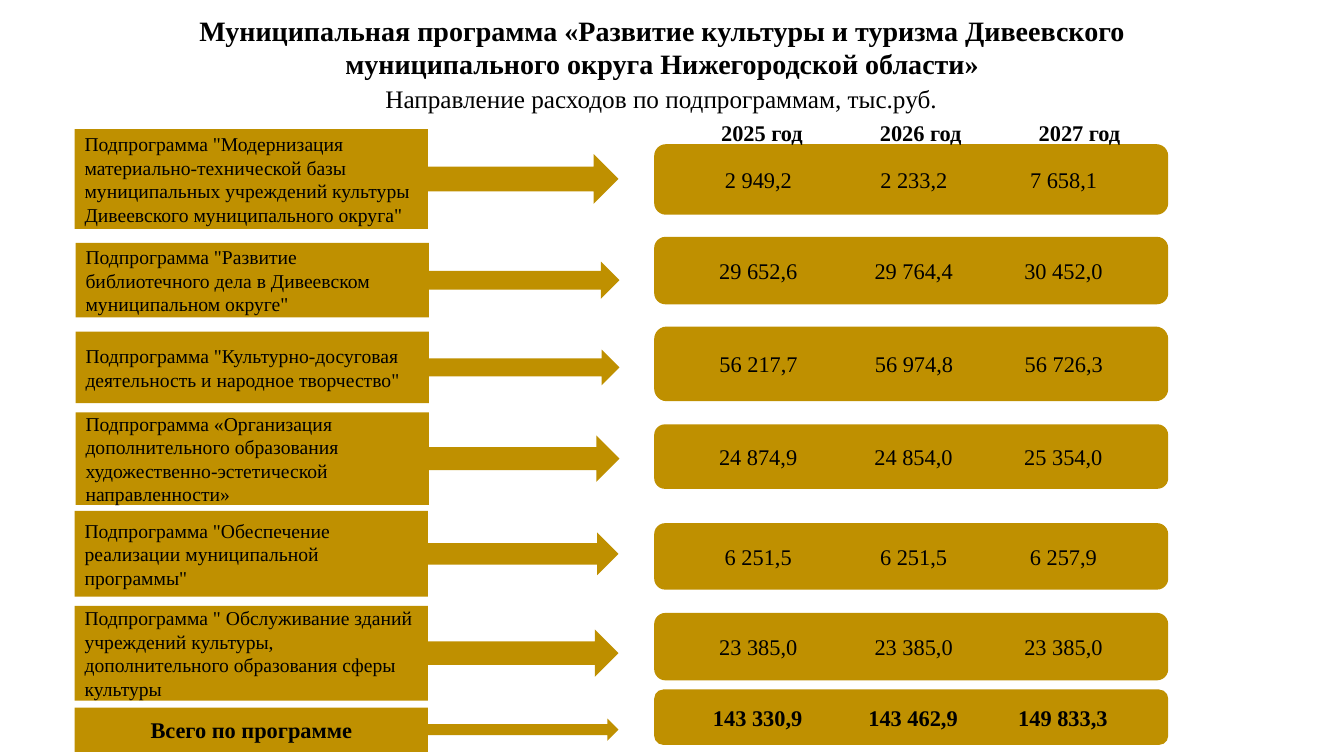
from lxml import etree
from pptx import Presentation
from pptx.dml.color import RGBColor
from pptx.enum.shapes import MSO_SHAPE
from pptx.enum.text import MSO_ANCHOR, MSO_AUTO_SIZE, PP_ALIGN
from pptx.oxml.ns import qn
from pptx.util import Pt

LEFT, CENTER = PP_ALIGN.LEFT, PP_ALIGN.CENTER
MIDDLE = MSO_ANCHOR.MIDDLE
NO_AUTOFIT = MSO_AUTO_SIZE.NONE
CALLOUT, ROUNDED = MSO_SHAPE.RIGHT_ARROW_CALLOUT, MSO_SHAPE.ROUNDED_RECTANGLE
COLORS = {"gold": "BF9000", "text": "000000"}
FONT = "Times New Roman"
VALUE_TABS = (72, 183, 290)

TITLE = ("Муниципальная программа «Развитие культуры и туризма Дивеевского "
         "муниципального округа Нижегородской области»")
SUBTITLE = "Направление расходов по подпрограммам, тыс.руб."
YEARS = ("2025 год", "2026 год", "2027 год")
PROGRAMS = [
    ('Подпрограмма "Модернизация материально-технической базы муниципальных '
     'учреждений культуры Дивеевского муниципального округа"',
     53.3, 92.2, 71.3, 103, 50.4, ("2 949,2", "2 233,2", "7 658,1")),
    ('Подпрограмма "Развитие библиотечного дела в Дивеевском муниципальном округе"',
     54, 173.5, 53.3, 169.2, 48.2, ("29 652,6", "29 764,4", "30 452,0")),
    ('Подпрограмма "Культурно-досуговая деятельность и народное творчество"',
     54, 236.9, 51.1, 233.3, 53.3, ("56 217,7", "56 974,8", "56 726,3")),
    ("Подпрограмма «Организация дополнительного образования "
     "художественно-эстетической направленности»",
     54, 294.5, 66.2, 303.1, 46.1, ("24 874,9", "24 854,0", "25 354,0")),
    ('Подпрограмма "Обеспечение реализации муниципальной программы"',
     53.3, 365, 61.2, 373.7, 47.5, ("6 251,5", "6 251,5", "6 257,9")),
    ('Подпрограмма " Обслуживание зданий учреждений культуры, '
     'дополнительного образования сферы культуры',
     53.3, 432.7, 67.7, 437.8, 48.2, ("23 385,0", "23 385,0", "23 385,0")),
]
TOTAL = ("Всего по программе", 53.3, 505.4, 31.7, 492.5, 39.6,
         ("143 330,9", "143 462,9", "149 833,3"))


class SlideBuilder:
    def __init__(self, prs):
        self.s = prs.slides.add_slide(prs.slide_layouts[5])

    def set_text(self, sp, text, size, bold=False, align=CENTER, tabs=()):
        tf = sp.text_frame
        tf.word_wrap = True
        tf.auto_size = NO_AUTOFIT
        tf.vertical_anchor = MIDDLE
        p = tf.paragraphs[0]
        p.text = text
        p.alignment = align
        if tabs:
            tf.margin_left = tf.margin_right = 0
            tab_list = etree.SubElement(p._p.get_or_add_pPr(), qn("a:tabLst"))
            for pos in tabs:
                etree.SubElement(tab_list, qn("a:tab"), pos=str(Pt(pos)), algn="ctr")
        p.font.name = FONT
        p.font.size = Pt(size)
        p.font.bold = bold
        p.font.color.rgb = RGBColor.from_string(COLORS["text"])

    def title(self, text, x, y, w, h):
        sp = self.s.shapes.title
        sp.left, sp.top, sp.width, sp.height = Pt(x), Pt(y), Pt(w), Pt(h)
        self.set_text(sp, text, 20, bold=True)

    def label(self, text, x, y, w, h, size, bold=False):
        sp = self.s.shapes.add_textbox(Pt(x), Pt(y), Pt(w), Pt(h))
        self.set_text(sp, text, size, bold)

    def block(self, kind, text, x, y, w, h, size, **style):
        sp = self.s.shapes.add_shape(kind, Pt(x), Pt(y), Pt(w), Pt(h))
        sp.shadow.inherit = False
        sp.fill.solid()
        sp.fill.fore_color.rgb = RGBColor.from_string(COLORS["gold"])
        sp.line.fill.background()
        self.set_text(sp, text, size, **style)

    def row(self, name, x, y, h, values_y, values_h, values, total=False):
        self.block(CALLOUT, name, x, y, 388.5, h, 16 if total else 14,
                   bold=total, align=CENTER if total else LEFT)
        text = "".join("\t" + value for value in values)
        self.block(ROUNDED, text, 467.3, values_y, 367.2, values_h, 16,
                   bold=total, align=LEFT, tabs=VALUE_TABS)


def main():
    prs = Presentation()
    prs.slide_width, prs.slide_height = Pt(960), Pt(540)
    slide = SlideBuilder(prs)
    slide.title(TITLE, 120.2, 5, 705.6, 56.9)
    slide.label(SUBTITLE, 151.2, 56.2, 642.2, 28.8, 18)
    for program in PROGRAMS:
        slide.row(*program)
    slide.row(*TOTAL, total=True)
    for i, year in enumerate(YEARS):
        slide.label(year, 493.9 + 113.4 * i, 88.6, 100.8, 11.5, 16, bold=True)
    prs.save("out.pptx")


if __name__ == "__main__":
    main()
